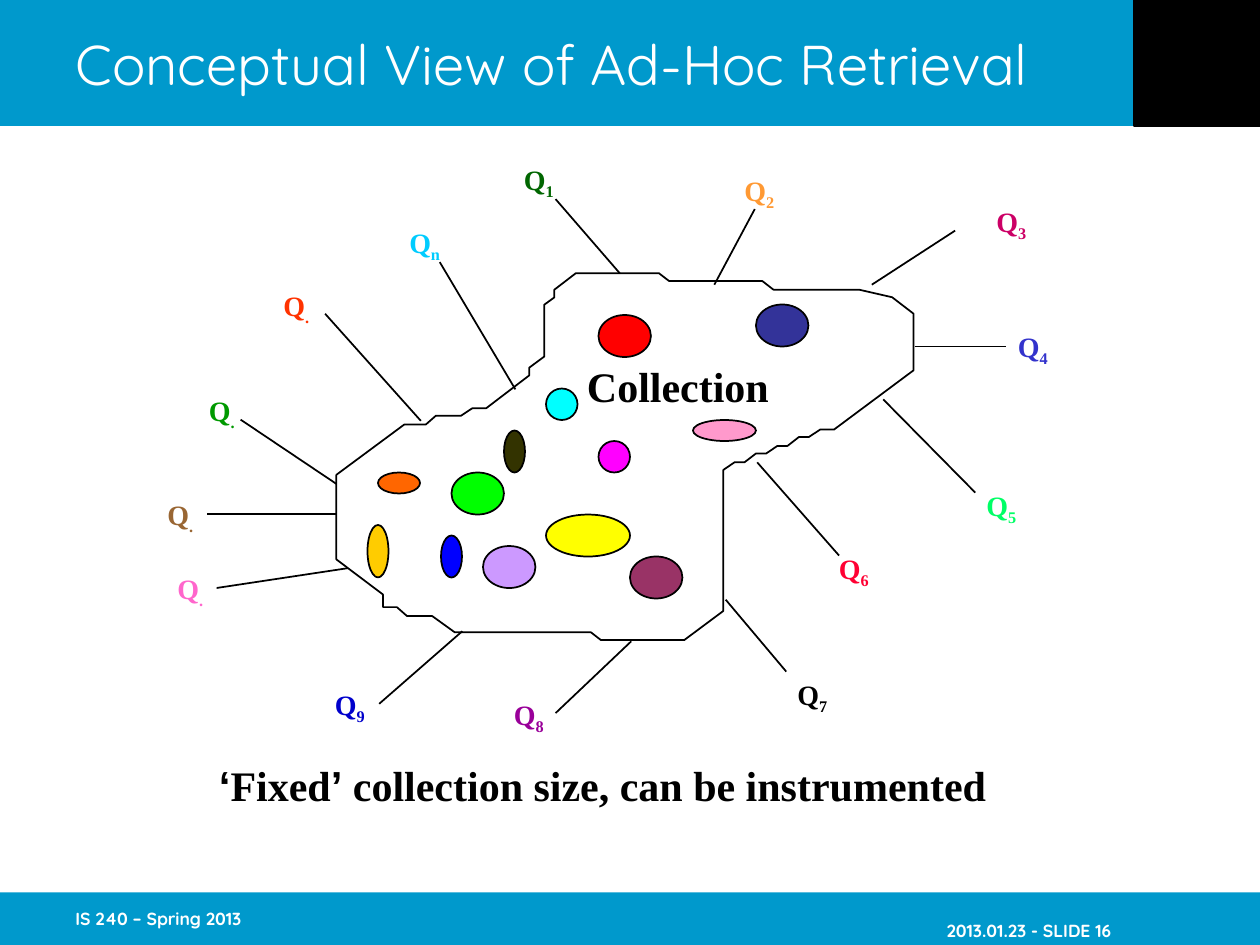
import pptx
import pptx.dml.color
import pptx.enum.shapes
import pptx.enum.text
import pptx.oxml.ns
import pptx.util
from lxml import etree

Pt = pptx.util.Pt
Hex = pptx.dml.color.RGBColor.from_string
Shape = pptx.enum.shapes.MSO_SHAPE
Fit = pptx.enum.text.MSO_AUTO_SIZE
Align = pptx.enum.text.PP_ALIGN
Anchor = pptx.enum.text.MSO_ANCHOR

BLACK, WHITE, BAND = Hex("000000"), Hex("FFFFFF"), Hex("0099CC")
PINE, AMBER, ROSE = Hex("006600"), Hex("FF9933"), Hex("CC0066")
IRIS, MINT, CRIMSON = Hex("3333CC"), Hex("00FF66"), Hex("FF0033")
PURPLE, NAVY, PINK = Hex("990099"), Hex("0000CC"), Hex("FF66CC")
BROWN, GREEN, RUST = Hex("996633"), Hex("009900"), Hex("FF3300")
SKY, ORANGE, BLUE = Hex("00CCFF"), Hex("FF6600"), Hex("0000FF")
OLIVE, YELLOW, FUCHSIA = Hex("333300"), Hex("FFFF00"), Hex("FF00FF")
RED, INK, BLUSH = Hex("FF0000"), Hex("333399"), Hex("FF99CC")
CYAN, PLUM, LILAC = Hex("00FFFF"), Hex("993366"), Hex("CC99FF")
LIME, GOLD = Hex("00FF00"), Hex("FFCC00")

SANS, SERIF, QUOTE = "Quicksand", "Times New Roman", "Arial"
LEFT, RIGHT = 1, 3

# Corners of the collection's ragged edge
EDGE = [
    (491, 165.6), (442, 165.6), (435.6, 160.6), (382.3, 160.6), (376.6, 156.2),
    (329, 156.2), (316.8, 165.6), (316.8, 170), (311, 174.2), (311, 203.8),
    (302.4, 210.2), (302.4, 214.6), (277.9, 233.3), (270, 233.3),
    (263.5, 237.6), (249.1, 237.6), (243.4, 242.6), (231.1, 242.6),
    (192.2, 271.4), (192.2, 319.7), (218.9, 339.8), (218.9, 347), (226.8, 347),
    (232.6, 352.1), (247, 352.1), (259.9, 361.4), (337.7, 361.4),
    (343.4, 365.8), (391, 365.8), (413.3, 349.2), (413.3, 268.6),
    (419.8, 264.2), (425.5, 264.2), (432, 259.2), (437.8, 259.2),
    (444.2, 254.9), (450, 254.9), (456.5, 249.8), (462.2, 249.8),
    (468.7, 245.5), (476.6, 245.5), (522, 211.7), (522, 179.3), (509.8, 169.9),
]

# Subscript, colour, label (left, top, width), line start, line end,
# joined side of the label, text indent
QUERIES = [
    ("1", PINE, (292.3, 89.3, 35.3), (354.2, 156.2), (317.5, 113.8), None, 0),
    ("2", AMBER, (418.3, 95.8, 32.4), (408.2, 162.7), (431.3, 119.5), None, 0),
    ("3", ROSE, (490.3, 113.4, 110.2), (498.2, 162.7), (545.8, 131.8), None, 72),
    ("4", IRIS, (574.6, 185, 35.3), (522.7, 198), (575.3, 198), LEFT, 0),
    ("5", MINT, (556.6, 275.8, 35.3), (504.7, 228.2), (557.3, 281.5), None, 0),
    ("6", CRIMSON, (472.3, 311.8, 35.3), (432.7, 264.2), (479.5, 317.5), None, 0),
    ("7", BLACK, (448.6, 383.8, 35.3), (414.7, 342.7), (449.3, 383.8), None, 0),
    ("8", PURPLE, (286.6, 395.3, 35.3), (360.7, 366.5), (317.5, 407.5), None, 0),
    ("9", NAVY, (184.3, 389.2, 32.4), (264.2, 360.7), (215.3, 401.8), RIGHT, 0),
    (".", PINK, (94.3, 323, 29.5), (198.7, 324.7), (125.3, 335.5), RIGHT, 0),
    (".", BROWN, (88.6, 280.8, 29.5), (192.2, 293.8), (119.5, 293.8), RIGHT, 0),
    (".", GREEN, (112.3, 221.5, 29.5), (192.2, 276.5), (137.5, 239.8), None, 0),
    (".", RUST, (154.8, 161.3, 32.4), (240.5, 240.5), (185.8, 179.3), None, 0),
    ("n", SKY, (226.8, 125.3, 33.1), (294.5, 222.5), (251.3, 149.8), None, 0),
]

# Documents: left, top, width, height, colour
DOCS = [
    (216, 270, 24, 12, ORANGE), (252, 306, 12, 24, BLUE),
    (288, 246, 12, 24, OLIVE), (312, 294, 48, 24, YELLOW),
    (342, 252, 18, 18, FUCHSIA), (342, 180, 30, 24, RED),
    (432, 174, 30, 24, INK), (396, 240, 36, 12, BLUSH),
    (312, 222, 18, 18, CYAN), (360, 318, 30, 24, PLUM),
    (276, 312, 30, 24, LILAC), (258, 270, 30, 24, LIME),
    (210, 300, 12, 30, GOLD),
]


class Deck:
    """Holds the current slide and the line style."""

    def __init__(self, slide, pen=BLACK, width=1):
        self.slide, self.shapes = slide, slide.shapes
        self.pen, self.width = pen, Pt(width)

    def stroke(self, item):
        item.line.color.rgb = self.pen
        item.line.width = self.width

    def run(self, para, text, size, color, font, bold=True):
        run = para.add_run()
        run.text = text
        run.font.size, run.font.name, run.font.bold = Pt(size), font, bold
        run.font.color.rgb = color
        return run

    def title(self, text, *box):
        title = self.shapes.title
        title.left, title.top, title.width, title.height = map(Pt, box)
        title.text_frame.vertical_anchor = Anchor.MIDDLE
        para = title.text_frame.paragraphs[0]
        para.alignment = Align.LEFT
        self.run(para, text, 32, WHITE, SANS, False)
        title.element.getparent().append(title.element)  # in front of the band

    def shape(self, kind, x, y, w, h, fill, edge=True):
        item = self.shapes.add_shape(kind, Pt(x), Pt(y), Pt(w), Pt(h))
        item.shadow.inherit = False
        item.fill.solid()
        item.fill.fore_color.rgb = fill
        if edge:
            self.stroke(item)
        else:
            item.line.fill.background()

    def outline(self, points):
        start, *rest = [(Pt(x), Pt(y)) for x, y in points]
        pen = self.shapes.build_freeform(*start)
        pen.add_line_segments(rest, close=True)
        item = pen.convert_to_shape()
        item.shadow.inherit = False
        item.fill.background()
        self.stroke(item)

    def text(self, x, y, w, h, wrap=False):
        """Add an empty text box that fits its text."""
        box = self.shapes.add_textbox(Pt(x), Pt(y), Pt(w), Pt(h))
        box.text_frame.word_wrap = wrap
        box.text_frame.auto_size = Fit.SHAPE_TO_FIT_TEXT
        return box, box.text_frame.paragraphs[0]

    def footer(self, text, x, align, left=7.2, right=0, top=3.6):
        box, para = self.text(x, 510, 150, 30, True)
        frame = box.text_frame
        frame.auto_size = Fit.NONE
        frame.vertical_anchor = Anchor.MIDDLE
        frame.margin_left, frame.margin_right = Pt(left), Pt(right)
        frame.margin_top = Pt(top)
        para.alignment = align
        self.run(para, text, 10, WHITE, SANS)

    def query(self, sub, color, spot, start, end, side, indent):
        box, para = self.text(*spot, 26, indent > 0)
        if indent:
            para.level = 2
            para._p.get_or_add_pPr().set("marL", str(Pt(indent)))
        self.run(para, "Q", 16, color, SERIF)
        low = self.run(para, sub, 16, color, SERIF)
        low.font._element.set("baseline", "-25000")
        self.line(start, end, box, side)

    def line(self, start, end, box, side):
        ends = map(Pt, start + end)
        line = self.shapes.add_connector(
            pptx.enum.shapes.MSO_CONNECTOR.STRAIGHT, *ends)
        self.stroke(line)
        etree.SubElement(line._element.spPr, pptx.oxml.ns.qn("a:effectLst"))
        if side is not None:
            line.end_connect(box, side)


def main():
    show = pptx.Presentation()
    show.slide_width, show.slide_height = Pt(720), Pt(540)
    deck = Deck(show.slides.add_slide(show.slide_layouts[5]))

    deck.shape(Shape.RECTANGLE, 0, 0, 720, 72, BAND, False)
    deck.shape(Shape.RECTANGLE, 0, 510, 720, 30, BAND, False)
    deck.shape(Shape.RECTANGLE, 648, 0, 72, 72, BLACK)
    deck.footer("2013.01.23 - SLIDE 16", 534, Align.RIGHT, 0, 49, 16.6)
    deck.footer("IS 240 – Spring 2013", 36, Align.LEFT)
    deck.title("Conceptual View of Ad-Hoc Retrieval", 36, 0, 612, 72)

    deck.outline(EDGE)
    name = deck.text(328.3, 202.3, 120, 36)[1]
    deck.run(name, "Collection", 24, BLACK, SERIF)
    note = deck.text(118, 430.6, 457, 36)[1]
    for text, font in [("‘", QUOTE), ("Fixed", SERIF), ("’", QUOTE),
                       (" collection size, can be instrumented", SERIF)]:
        deck.run(note, text, 24, BLACK, font)
    for query in QUERIES:
        deck.query(*query)
    for doc in DOCS:
        deck.shape(Shape.OVAL, *doc)

    show.save("out.pptx")


if __name__ == "__main__":
    main()
